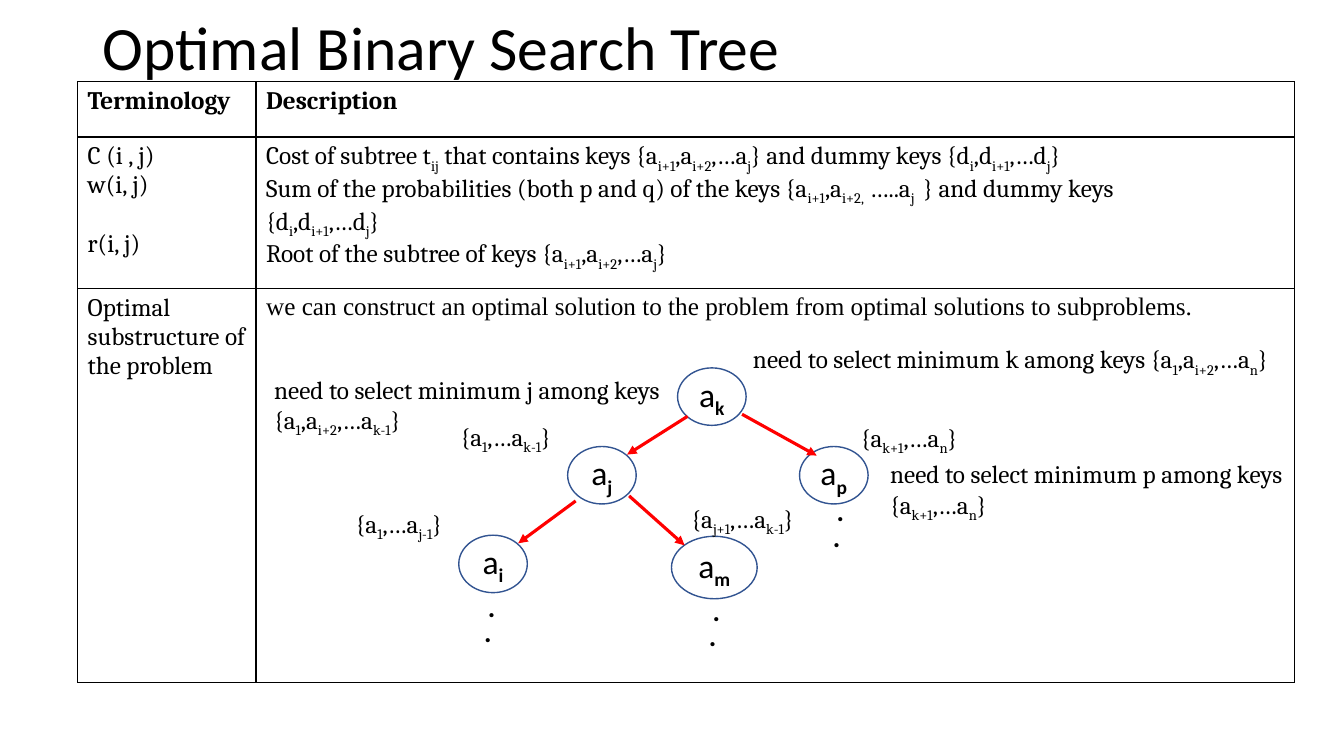
"""Build the slide on optimal binary search trees."""
from lxml.etree import SubElement
from pptx import Presentation
from pptx.dml.color import RGBColor
from pptx.enum.shapes import MSO_CONNECTOR, MSO_SHAPE
from pptx.enum.text import MSO_ANCHOR, MSO_AUTO_SIZE, PP_ALIGN
from pptx.oxml.ns import qn
from pptx.util import Inches, Pt

COLORS = {"ink": "000000", "node": "325491", "arrow": "FF0000"}

deck = Presentation()
deck.slide_width, deck.slide_height = Inches(13.33), Inches(7.5)
COLUMN, ROW = deck.slide_width / 1333, deck.slide_height / 750
page = deck.slides.add_slide(deck.slide_layouts[6])


def write(frame, lines, size=18, font="Cambria", bold=False, bold_subscript=False):
    """Fill a frame; every second part between bars is a subscript."""
    for number, line in enumerate(lines):
        para = frame.add_paragraph() if number else frame.paragraphs[0]
        for position, part in enumerate(line.split("|")):
            if not part:
                continue
            subscript = position % 2 == 1
            span = para.add_run()
            span.text = part
            span.font.size, span.font.name = Pt(size), font
            span.font.bold = bold or (subscript and bold_subscript)
            span.font.color.rgb = RGBColor.from_string(COLORS["ink"])
            if subscript:
                span._r.get_or_add_rPr().set("baseline", "-25000")


def add_text(left, top, width, height, line, **style):
    """Place a wrapping text box on the grid."""
    box = page.shapes.add_textbox(round(left * COLUMN), round(top * ROW),
                                  round(width * COLUMN), round(height * ROW))
    box.text_frame.word_wrap = True
    box.text_frame.auto_size = MSO_AUTO_SIZE.SHAPE_TO_FIT_TEXT
    write(box.text_frame, [line], **style)
    return box


title = add_text(92, 7, 1150, 86, "Optimal Binary Search Tree", size=44, font="Calibri")
title.text_frame.auto_size = MSO_AUTO_SIZE.NONE
title.text_frame.vertical_anchor = MSO_ANCHOR.MIDDLE
title.text_frame.paragraphs[0].line_spacing = 0.9

DUMMY_KEYS = "{d|i|,d|i+1|,…d|j|}"
SUBTREE_KEYS = "{a|i+1|,a|i+2|,…a|j|}"
table_rows = [
    (["Terminology"], ["Description"]),
    (["C (i , j)", "w(i, j)", "r(i, j)"],
     ["Cost of subtree t|ij| that contains keys " + SUBTREE_KEYS + " and dummy keys " + DUMMY_KEYS,
      "Sum of the probabilities (both p and q) of the keys "
      "{a|i+1|,a|i+2,| …..a|j | } and dummy keys",
      DUMMY_KEYS,
      "Root of the subtree of keys " + SUBTREE_KEYS]),
    (["Optimal substructure of the problem"],
     ["we can construct an optimal solution to the problem "
      "from optimal solutions to subproblems."]),
]
column_widths, row_heights = (177, 1030), (55, 150, 391)
table = page.shapes.add_table(
    len(row_heights), len(column_widths), round(77 * COLUMN), round(81 * ROW),
    round(sum(column_widths) * COLUMN), round(sum(row_heights) * ROW)).table
table.first_row = table.horz_banding = False
for column, width in zip(table.columns, column_widths):
    column.width = round(width * COLUMN)
for r, (row, height) in enumerate(zip(table.rows, row_heights)):
    row.height = round(height * ROW)
    for c, lines in enumerate(table_rows[r]):
        cell = table.cell(r, c)
        font = "Times New Roman" if (r, c) == (2, 1) else "Cambria"
        write(cell.text_frame, lines, font=font, bold=r == 0)
        properties = cell._tc.get_or_add_tcPr()
        for side in ("a:lnL", "a:lnR", "a:lnT", "a:lnB"):
            border = SubElement(properties, qn(side), w=str(Pt(1)))
            fill = SubElement(border, qn("a:solidFill"))
            SubElement(fill, qn("a:srgbClr"), val=COLORS["ink"])
        cell.fill.background()
table.cell(1, 0).text_frame.paragraphs[2].space_before = Pt(21)

nodes = [
    ("k", 672, 365, 68, 57), ("j", 563, 443, 68, 57), ("p", 793, 443, 68, 57),
    ("i", 455, 531, 68, 57), ("m", 666, 532, 85, 62),
]
for key, left, top, width, height in nodes:
    node = page.shapes.add_shape(
        MSO_SHAPE.OVAL, round(left * COLUMN), round(top * ROW),
        round(width * COLUMN), round(height * ROW))
    node.shadow.inherit = False
    node.fill.background()
    node.line.color.rgb = RGBColor.from_string(COLORS["node"])
    node.line.width = Pt(1)
    node.text_frame.vertical_anchor = MSO_ANCHOR.MIDDLE
    write(node.text_frame, [f"a|{key}|"], size=24, font="Calibri", bold_subscript=True)
    node.text_frame.paragraphs[0].alignment = PP_ALIGN.CENTER

edges = [
    (682, 413, 622, 451), (736, 411, 810, 452),
    (571, 497, 514, 539), (624, 492, 679, 541),
]
for start_x, start_y, end_x, end_y in edges:
    edge = page.shapes.add_connector(
        MSO_CONNECTOR.STRAIGHT, round(start_x * COLUMN), round(start_y * ROW),
        round(end_x * COLUMN), round(end_y * ROW))
    edge.line.color.rgb = RGBColor.from_string(COLORS["arrow"])
    edge.line.width = Pt(2.25)
    SubElement(edge.line._get_or_add_ln(), qn("a:tailEnd"), type="triangle")
    SubElement(edge._element.spPr, qn("a:effectLst"))

labels = [
    (447, 413, 143, 40, "{a|1|,…a|k-1|}"),
    (844, 414, 170, 40, "{a|k+1|,…a|n|}"),
    (343, 499, 143, 40, "{a|1|,…a|j-1|}"),
    (676, 494, 170, 40, "{a|j+1|,…a|k-1|}"),
    (737, 336, 556, 40, "need to select minimum k among keys {a|1|,a|i+2|,…a|n|}"),
    (873, 450, 438, 71, "need to select minimum p among keys {a|k+1|,…a|n|}"),
    (262, 366, 438, 71, "need to select minimum j among keys {a|1|,a|i+2|,…a|k-1|}"),
]
for label in labels:
    add_text(*label)

for left, top in ((697, 584), (474, 580), (820, 485)):
    add_text(left, top, 20, 40, ".", size=20, font="Calibri", bold=True)
    add_text(left + 5, top + 25, 11, 44, ".", size=20, font="Calibri", bold=True)

deck.save("out.pptx")
